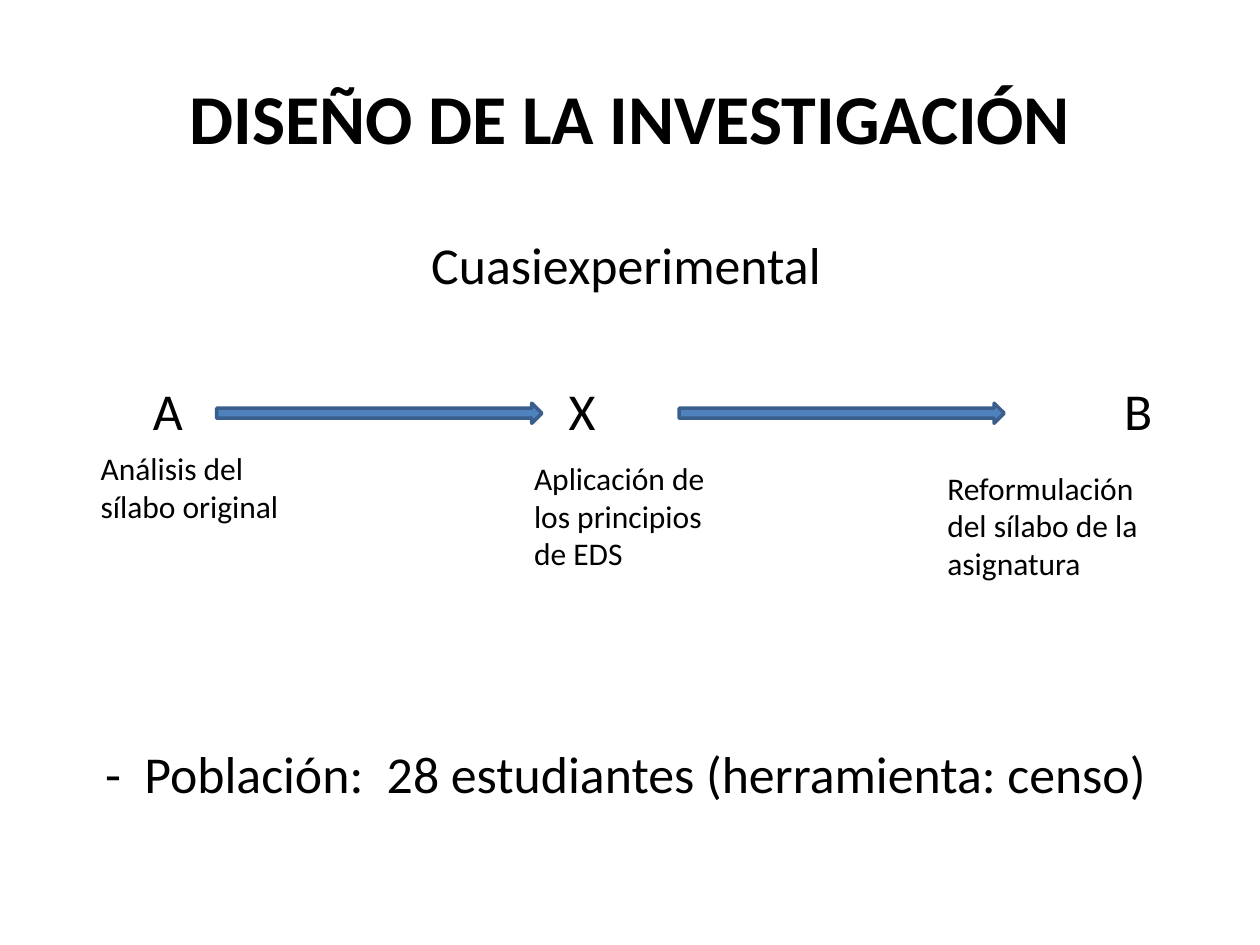
"""Build the research design slide with its A-X-B sequence."""
from lxml import etree
from pptx import Presentation
from pptx.dml.color import RGBColor
from pptx.enum.shapes import MSO_SHAPE
from pptx.enum.text import MSO_ANCHOR, MSO_AUTO_SIZE, PP_ALIGN
from pptx.oxml.ns import qn
from pptx.util import Pt

ARROW = MSO_SHAPE.RIGHT_ARROW
MIDDLE = MSO_ANCHOR.MIDDLE
CENTER = PP_ALIGN.CENTER
FIXED, GROW = MSO_AUTO_SIZE.NONE, MSO_AUTO_SIZE.SHAPE_TO_FIT_TEXT
COLORS = {"text": "000000", "arrow": "4F81BD", "outline": "3A5F8C"}


def place(shape, left, top, width, height):
    shape.left, shape.top = Pt(left), Pt(top)
    shape.width, shape.height = Pt(width), Pt(height)


def format_font(para, size, bold=False):
    values = {"name": "Calibri", "size": Pt(size), "bold": bold}
    for span in para.runs:
        for name, value in values.items():
            setattr(span.font, name, value)
        span.font.color.rgb = RGBColor.from_string(COLORS["text"])


deck = Presentation()
deck.slide_width, deck.slide_height = Pt(720), Pt(540)
page = deck.slides.add_slide(deck.slide_layouts[1])

title = page.shapes.title
place(title, 36, 21.6, 648, 90)
title.text_frame.text = "DISEÑO DE LA INVESTIGACIÓN"
title.text_frame.vertical_anchor = MIDDLE
title.text_frame.paragraphs[0].alignment = CENTER
format_font(title.text_frame.paragraphs[0], 40, True)

body = page.placeholders[1]
place(body, 33.84, 129.6, 648, 356.4)
frame = body.text_frame
frame.auto_size = FIXED
frame.text = "Cuasiexperimental\n-  Población:  28 estudiantes (herramienta: censo)"
for para, space in zip(frame.paragraphs, (0, 255)):
    props = para._p.get_or_add_pPr()
    props.set("marL", "0")
    props.set("indent", "0")
    etree.SubElement(props, qn("a:buNone"))
    para.alignment = CENTER
    para.space_before = Pt(space)
    format_font(para, 29.6)

for left in (123.84, 388.08):
    arrow = page.shapes.add_shape(ARROW, Pt(left), Pt(230.4), Pt(185.76), Pt(11.52))
    arrow.shadow.inherit = False
    arrow.fill.solid()
    arrow.fill.fore_color.rgb = RGBColor.from_string(COLORS["arrow"])
    arrow.line.color.rgb = RGBColor.from_string(COLORS["outline"])
    arrow.line.width = Pt(2)

labels = [
    ("A", 29.6, 80.24, 212.7, 40, 43.3),
    ("X", 29.6, 317.84, 212.7, 40, 43.3),
    ("B", 29.6, 635.34, 212.7, 40, 43.3),
    ("Análisis del sílabo original", 18, 50.4, 253.2, 118.08, 51.12),
    ("Aplicación de los principios de EDS", 18, 298.08, 258.6, 118.08, 72.72),
    ("Reformulación del sílabo de la asignatura", 18, 534.24, 264.24, 135.36, 72.72),
]
for text, size, *bounds in labels:
    box = page.shapes.add_textbox(*(Pt(value) for value in bounds))
    box.text_frame.word_wrap = True
    box.text_frame.auto_size = GROW
    box.text_frame.text = text
    format_font(box.text_frame.paragraphs[0], size)

deck.save("out.pptx")
